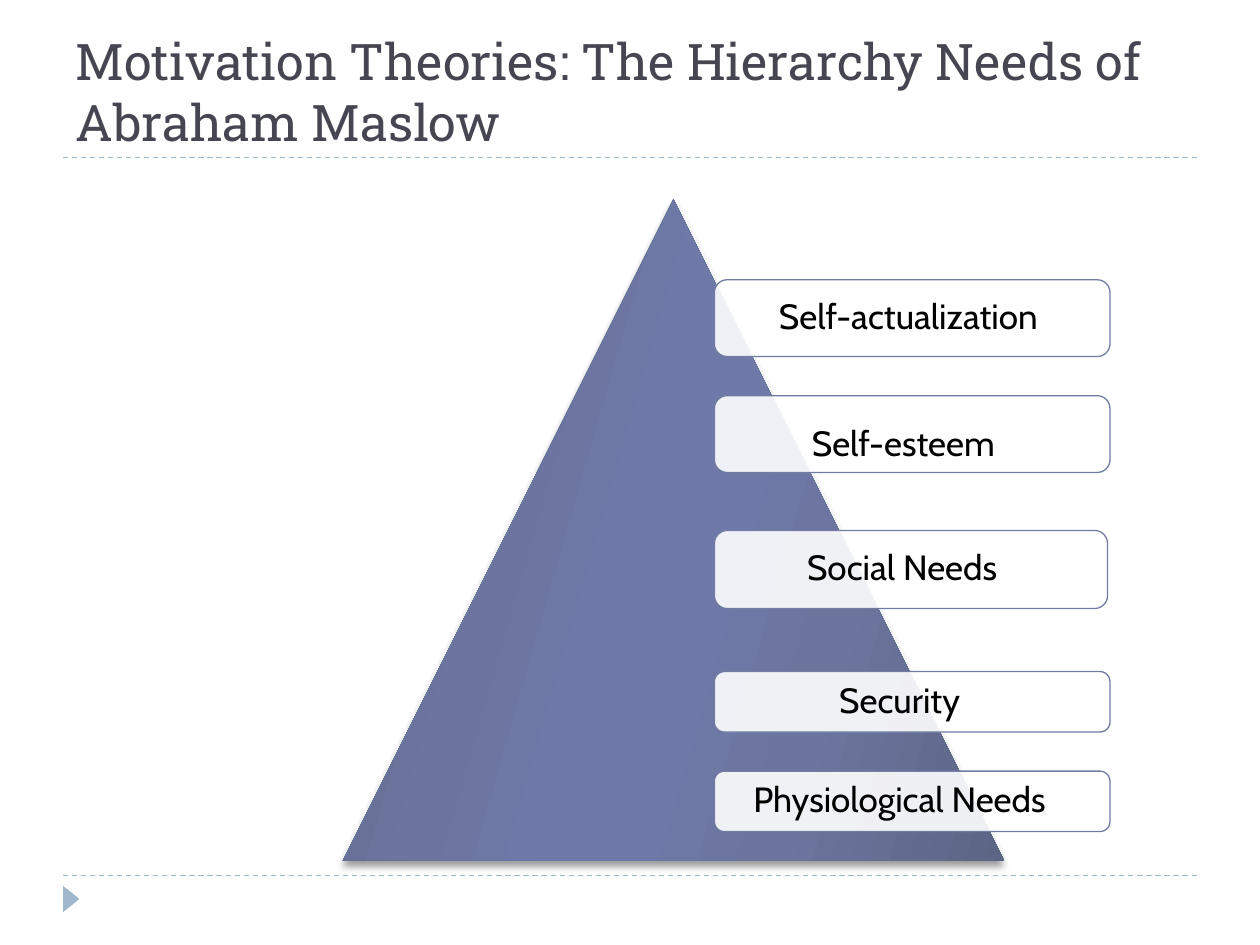
from pptx import Presentation
from pptx.dml.color import RGBColor
from pptx.enum.dml import MSO_LINE_DASH_STYLE as Dash
from pptx.enum.shapes import MSO_CONNECTOR as Conn, MSO_SHAPE as Shape
from pptx.enum.text import MSO_ANCHOR as Anchor, PP_ALIGN as Align
from pptx.oxml import parse_xml
from pptx.oxml.ns import nsdecls
from pptx.util import Inches, Pt
from lxml.etree import SubElement

TITLE = "Motivation Theories: The Hierarchy Needs of Abraham Maslow"
NEEDS = [
    # label, top, width, height, shift left, shift down
    ("Self-actualization", 2.22, 3.14, 0.61, 0.03, 0),
    ("Self-esteem", 3.14, 3.14, 0.61, 0.07, 0.09),
    ("Social Needs", 4.21, 3.12, 0.62, 0.07, 0),
    ("Security", 5.33, 3.14, 0.48, 0.1, 0),
    ("Physiological Needs", 6.12, 3.14, 0.48, 0.1, 0),
]
COLORS = {"title": "464653", "rule": "9FB8CD", "edge": "727CA3",
          "card": "FFFFFF", "text": "000000"}
SHADES = [(0, "5D6585"), (30, "6B759E"), (45, "6E79A7"),
          (55, "6E79A7"), (73, "6B759E"), (100, "5D6585")]
RULES = [1.25, 6.95]
LEFT, INSET = 5.67, 0.11


def color(name):
    return RGBColor.from_string(COLORS[name])


def add_shape(kind, *box):
    shape = slide.shapes.add_shape(kind, *map(Inches, box))
    shape.shadow.inherit = False
    shape.line.fill.background()
    return shape


def add_rule(y):
    rule = slide.shapes.add_connector(
        Conn.STRAIGHT, Inches(0.5), Inches(y), Inches(9.5), Inches(y))
    rule.line.color.rgb = color("rule")
    rule.line.width = Pt(0.75)
    rule.line.dash_style = Dash.DASH
    SubElement(rule._element.spPr, f"{{{A}}}effectLst")


def add_pyramid():
    shape = add_shape(Shape.ISOSCELES_TRIANGLE, 2.72, 1.58, 5.25, 5.25)
    shape.fill.background()
    props = shape._element.spPr
    stops = "".join(
        f'<a:gs pos="{pos * 1000}"><a:srgbClr val="{shade}"/></a:gs>'
        for pos, shade in SHADES)
    props.replace(props.find(f"{{{A}}}noFill"), parse_xml(
        f'<a:gradFill {nsdecls("a")}><a:gsLst>{stops}</a:gsLst>'
        '<a:lin ang="960000" scaled="0"/></a:gradFill>'))
    props.replace(props.find(f"{{{A}}}effectLst"), parse_xml(
        f'<a:effectLst {nsdecls("a")}><a:outerShdw blurRad="{Pt(4)}" '
        f'dist="{Pt(3.4)}" dir="5400000" rotWithShape="0">'
        '<a:srgbClr val="000000"><a:alpha val="40000"/></a:srgbClr>'
        '</a:outerShdw></a:effectLst>'))


def add_need(label, top, width, height, left, down):
    card = add_shape(Shape.ROUNDED_RECTANGLE, LEFT, top, width, height)
    card.fill.solid()
    card.fill.fore_color.rgb = color("card")
    fill = card._element.spPr.find(f"{{{A}}}solidFill")
    SubElement(fill[0], f"{{{A}}}alpha", val="90000")
    card.line.color.rgb = color("edge")
    card.line.width = Pt(0.75)
    frame = card.text_frame
    frame.word_wrap = True
    frame.vertical_anchor = Anchor.MIDDLE
    frame.margin_left = Inches(INSET)
    frame.margin_right = Inches(INSET + 2 * left)
    frame.margin_top = Inches(0.08 + 2 * down)
    frame.margin_bottom = Inches(0.08)
    frame.text = label
    para = frame.paragraphs[0]
    para.alignment = Align.CENTER
    para.line_spacing = 0.9
    para.font.name = "Cabin"
    para.font.size = Pt(20)
    para.font.color.rgb = color("text")


def add_title():
    title = slide.shapes.title
    title.left, title.top, title.width, title.height = map(
        Inches, (0.5, 0.17, 9, 1.08))
    frame = title.text_frame
    frame.text = TITLE
    frame.word_wrap = True
    frame.vertical_anchor = Anchor.BOTTOM
    para = frame.paragraphs[0]
    para.alignment = Align.LEFT
    para.font.name = "Roboto Slab"
    para.font.size = Pt(28.8)
    para.font.color.rgb = color("title")


A = "http://schemas.openxmlformats.org/drawingml/2006/main"
deck = Presentation()
deck.slide_width, deck.slide_height = Inches(10), Inches(7.5)
slide = deck.slides.add_slide(deck.slide_layouts[5])

add_title()
for y in RULES:
    add_rule(y)
mark = add_shape(Shape.ISOSCELES_TRIANGLE, 0.46, 7.07, 0.21, 0.13)
mark.rotation = 90
mark.fill.solid()
mark.fill.fore_color.rgb = color("rule")
add_pyramid()
for need in NEEDS:
    add_need(*need)

deck.save("out.pptx")
